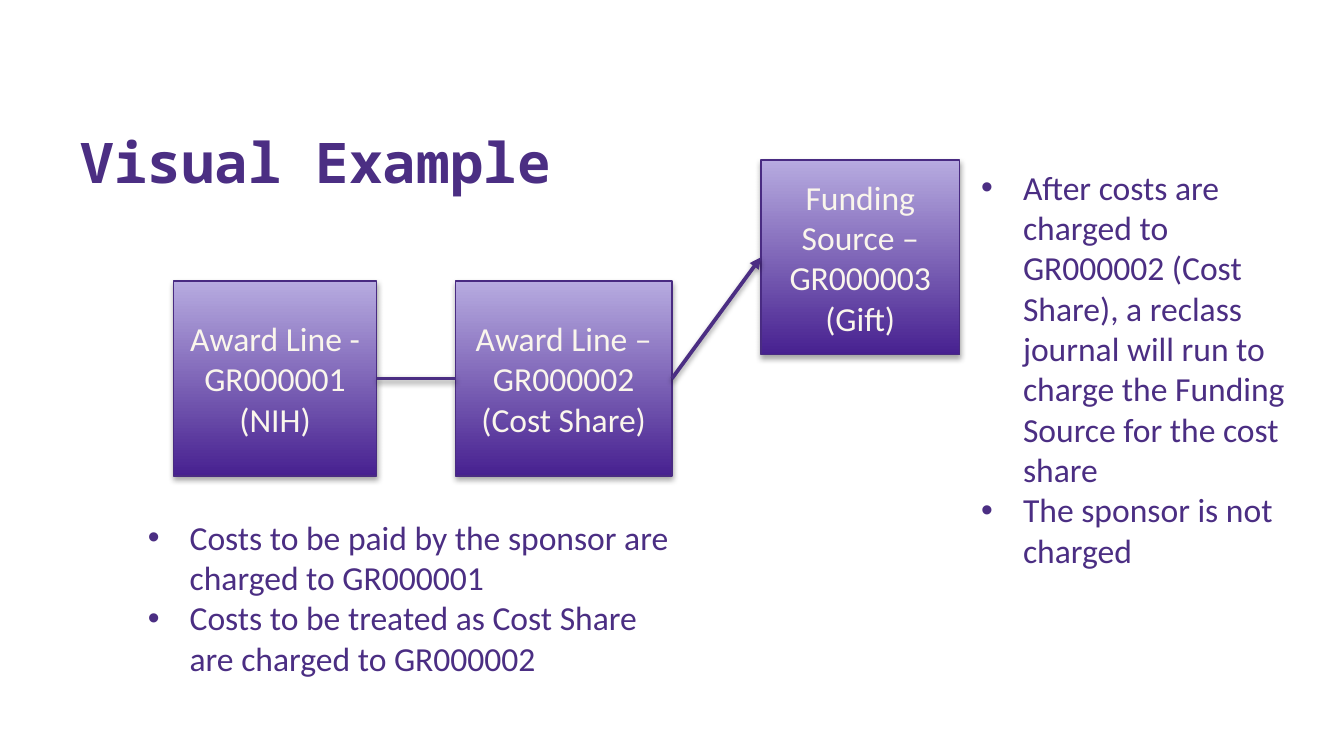
from lxml import etree
from pptx import Presentation
from pptx.dml.color import RGBColor
from pptx.enum.shapes import MSO_CONNECTOR, MSO_SHAPE
from pptx.enum.text import MSO_ANCHOR, MSO_AUTO_SIZE, PP_ALIGN
from pptx.oxml import parse_xml
from pptx.oxml.ns import nsdecls, qn
from pptx.util import Cm, Pt

# Content
TITLE = "Visual Example"
BOX_HEIGHT = 3.68
BOXES = [  # left, top, width in cm, paragraphs
    (3.28, 5.31, 3.84, ["Award Line - GR000001 (NIH)"]),
    (8.61, 5.31, 4.09, ["Award Line – GR000002", "(Cost Share)"]),
    (14.38, 3.02, 3.76, ["Funding Source –", "GR000003 (Gift)"]),
]
LINKS = [(0, 1, False), (1, 2, True)]  # from box, to box, arrowhead
LISTS = [  # left, top, width, height in cm, bullets
    ((2.54, 9.63, 10.64, 3.33),
     ["Costs to be paid by the sponsor are charged to GR000001",
      "Costs to be treated as Cost Share are charged to GR000002"]),
    ((18.29, 3.02, 6.55, 7.95),
     ["After costs are charged to GR000002 (Cost Share), a reclass journal "
      "will run to charge the Funding Source for the cost share",
      "The sponsor is not charged"]),
]
COLORS = {"purple": "4B2E83", "edge": "492B82", "dark": "472190",
          "light": "B7ABE0", "cream": "FAF6EC"}


def rgb(name):
    return RGBColor.from_string(COLORS[name])


def place(sp, left, top, width, height):
    sp.left, sp.top, sp.width, sp.height = map(Cm, (left, top, width, height))


def fill_text(tf, lines, color, align, size=18, name="Calibri", bold=False):
    tf.word_wrap = True
    tf.auto_size = MSO_AUTO_SIZE.NONE
    tf.text = "\n".join(lines)
    for p in tf.paragraphs:
        p.alignment = align
        p.space_before = Pt(0)
        for r in p.runs:
            r.font.size, r.font.name, r.font.bold = Pt(size), name, bold
            r.font.color.rgb = rgb(color)


def add_shadow(sp, alpha, dist):
    sp._element.spPr.append(parse_xml(
        f'<a:effectLst {nsdecls("a")}><a:outerShdw blurRad="{Pt(3.1)}" '
        f'dist="{Pt(dist)}" dir="5400000" rotWithShape="0">'
        f'<a:srgbClr val="000000"><a:alpha val="{alpha * 1000}"/></a:srgbClr>'
        '</a:outerShdw></a:effectLst>'))


prs = Presentation()
prs.slide_width, prs.slide_height = Cm(25.4), Cm(14.28)
s = prs.slides.add_slide(prs.slide_layouts[3])
title, *bodies = s.placeholders

# Title
place(title, 1.27, 1.04, 22.73, 2.77)
fill_text(title.text_frame, [TITLE], "purple", PP_ALIGN.LEFT,
          30, "Noto Sans Mono", True)
title.text_frame.vertical_anchor = MSO_ANCHOR.BOTTOM

# Gradient boxes
boxes = []
for left, top, width, lines in BOXES:
    sp = s.shapes.add_shape(MSO_SHAPE.RECTANGLE, Cm(left), Cm(top),
                            Cm(width), Cm(BOX_HEIGHT))
    sp.fill.gradient()
    sp.fill.gradient_angle = 90
    for stop, color, position in zip(sp.fill.gradient_stops,
                                     ("dark", "light"), (0, 1)):
        stop.color.rgb = rgb(color)
        stop.position = position
    sp.line.color.rgb = rgb("edge")
    sp.line.width = Pt(0.75)
    add_shadow(sp, 35, 1.8)
    fill_text(sp.text_frame, lines, "cream", PP_ALIGN.CENTER)
    sp.text_frame.vertical_anchor = MSO_ANCHOR.MIDDLE
    boxes.append(sp)

# Connectors, right side to left side
for start, end, arrow in LINKS:
    line = s.shapes.add_connector(MSO_CONNECTOR.STRAIGHT, 0, 0, 0, 0)
    line.begin_connect(boxes[start], 3)
    line.end_connect(boxes[end], 1)
    line.line.color.rgb = rgb("purple")
    line.line.width = Pt(2)
    if arrow:
        etree.SubElement(line.line._get_or_add_ln(), qn("a:tailEnd"),
                         type="triangle")
    add_shadow(line, 38, 1.6)

# Bullet lists
for body, (area, bullets) in zip(bodies, LISTS):
    place(body, *area)
    fill_text(body.text_frame, bullets, "purple", PP_ALIGN.LEFT)
    for p in body.text_frame.paragraphs:
        pPr = p._p.get_or_add_pPr()
        pPr.set("marL", str(Cm(0.79)))
        pPr.set("indent", str(-Cm(0.79)))

# Unused placeholders
for sp in bodies[len(LISTS):]:
    sp._element.getparent().remove(sp._element)

prs.save("out.pptx")
